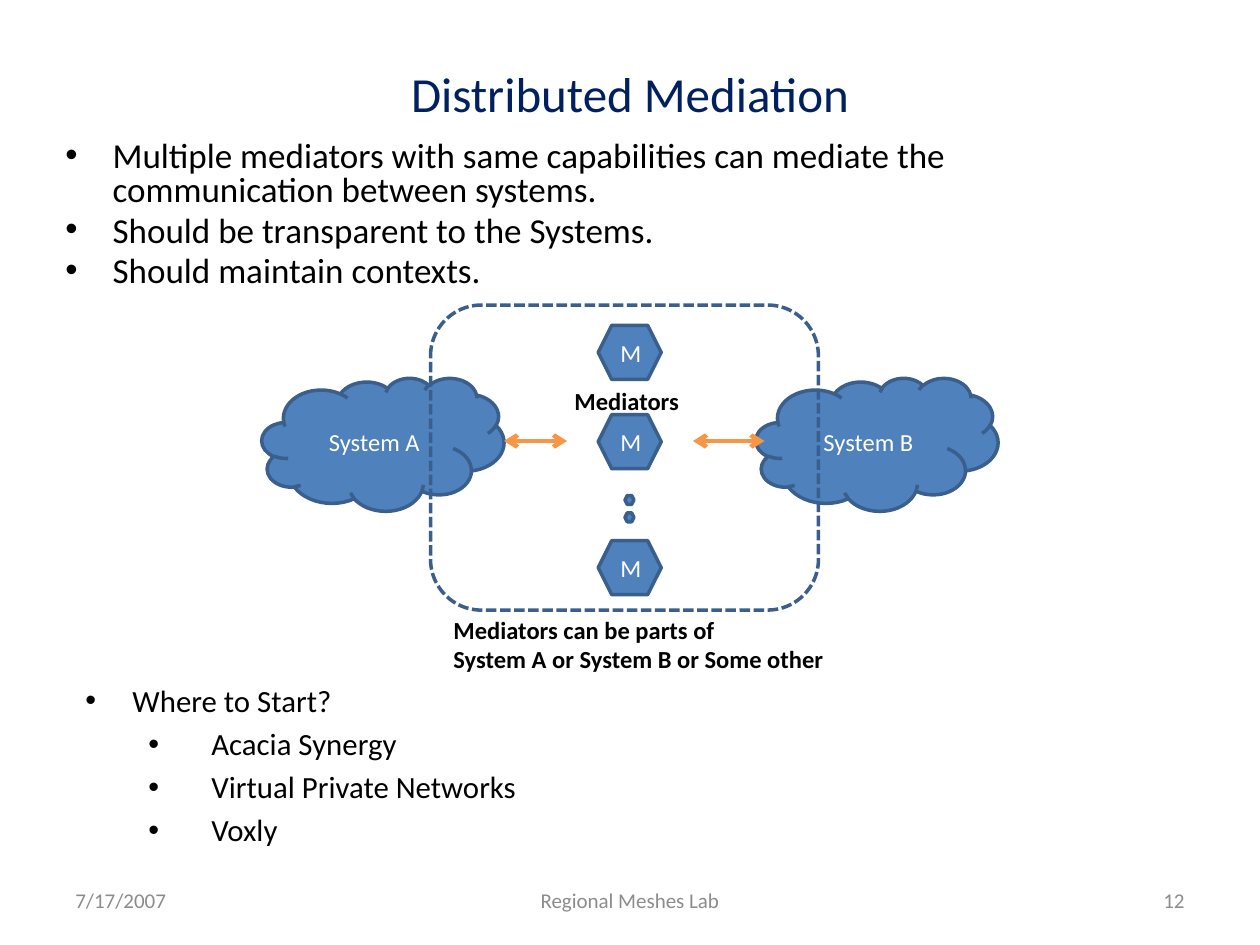
from lxml.etree import SubElement
from pptx import Presentation
from pptx.dml.color import RGBColor
from pptx.enum.dml import MSO_LINE
from pptx.enum.shapes import MSO_CONNECTOR, MSO_SHAPE as SHAPE
from pptx.enum.text import MSO_ANCHOR as ANCHOR, PP_ALIGN as ALIGN
from pptx.oxml.ns import qn
from pptx.util import Cm, Pt

COLORS = {"title": "002060", "text": "000000", "footer": "8C8C8C", "white": "FFFFFF",
          "fill": "4F81BD", "outline": "3A5F8C", "arrow": "F79646"}
FONT = "Calibri"


def rgb(name):
    """Return the named colour."""
    return RGBColor.from_string(COLORS[name])


def add_run(p, text, size, color, bold=False):
    """Add one formatted run to a paragraph."""
    r = p.add_run()
    r.text = text
    r.font.name, r.font.size, r.font.bold = FONT, Pt(size), bold
    r.font.color.rgb = rgb(color)


def add_text(shapes, box, lines, size, color, align=ALIGN.LEFT, anchor=ANCHOR.TOP,
             bold=False, wrap=True):
    """Add a text box with one paragraph per line."""
    tf = shapes.add_textbox(*map(Cm, box)).text_frame
    tf.word_wrap, tf.vertical_anchor = wrap, anchor
    for i, line in enumerate(lines):
        p = tf.add_paragraph() if i else tf.paragraphs[0]
        p.alignment = align
        add_run(p, line, size, color, bold)


def add_node(shapes, kind, box, label="", filled=True):
    """Add an outlined shape with an optional centred label."""
    sp = shapes.add_shape(kind, *map(Cm, box))
    sp.shadow.inherit = False
    sp.line.color.rgb, sp.line.width = rgb("outline"), Pt(2)
    if filled:
        sp.fill.solid()
        sp.fill.fore_color.rgb = rgb("fill")
    else:
        sp.fill.background()
    if label:
        tf = sp.text_frame
        tf.vertical_anchor = ANCHOR.MIDDLE
        p = tf.paragraphs[0]
        p.alignment = ALIGN.CENTER
        add_run(p, label, 14, "white")
    return sp


def add_arrow(shapes, x1, x2, y):
    """Add a horizontal line with an arrowhead at both ends."""
    c = shapes.add_connector(MSO_CONNECTOR.STRAIGHT, Cm(x1), Cm(y), Cm(x2), Cm(y))
    c.line.color.rgb, c.line.width = rgb("arrow"), Pt(2.5)
    ln = c.line._get_or_add_ln()
    for end in ("a:headEnd", "a:tailEnd"):
        SubElement(ln, qn(end), type="arrow")
    SubElement(c._element.spPr, qn("a:effectLst"))


def add_bullets(s, box, items, size):
    """Add a bulleted list of (level, text) items."""
    tf = s.shapes.add_textbox(*map(Cm, box)).text_frame
    tf.word_wrap = True
    for i, (level, text) in enumerate(items):
        p = tf.add_paragraph() if i else tf.paragraphs[0]
        p.level = level
        p.space_before = Pt(size * 0.2)
        p.line_spacing = 1.0 if level else 0.8
        margin, hang = (2.54, 1.27) if level else (0.95, 0.95)
        pPr = p._p.get_or_add_pPr()
        pPr.set("marL", str(Cm(margin)))
        pPr.set("indent", str(-Cm(hang)))
        SubElement(pPr, qn("a:buFont"), typeface="Arial")
        SubElement(pPr, qn("a:buChar"), char="•")
        add_run(p, text, size, "text")


def add_footer(s, x, y, w, h):
    """Place date, organisation and slide number along the bottom."""
    side, middle = 5.93, 8.05
    parts = [(x, side, "7/17/2007", ALIGN.LEFT),
             (x + (w - middle) / 2, middle, "Regional Meshes Lab", ALIGN.CENTER),
             (x + w - side, side, "12", ALIGN.RIGHT)]
    for left, width, text, align in parts:
        add_text(s.shapes, (left, y, width, h), [text], 12, "footer", align, ANCHOR.MIDDLE)


def add_diagram(s, x, y):
    """Draw two systems joined by a column of mediators."""
    shapes = s.shapes.add_group_shape().shapes
    for dx, name in ((0, "System A"), (9.96, "System B")):
        add_node(shapes, SHAPE.CLOUD, (x + dx, y + 1.47, 4.88, 2.68), name)
    for dy in (0.41, 2.21, 4.75):
        add_node(shapes, SHAPE.HEXAGON, (x + 6.78, y + dy, 1.27, 1.09), "M")
    for dy in (3.84, 4.19):
        add_node(shapes, SHAPE.HEXAGON, (x + 7.32, y + dy, 0.18, 0.18))
    for start, end in ((4.88, 6.15), (8.69, 10.13)):
        add_arrow(shapes, x + start, x + end, y + 2.74)
    add_text(shapes, (x + 6.05, y + 1.5, 2.64, 0.86), ["Mediators"], 14, "text",
             bold=True, wrap=False)
    add_text(shapes, (x + 3.61, y + 6.12, 8.74, 1.45),
             ["Mediators can be parts of", "System A or System B or Some other"],
             14, "text", bold=True)
    frame = add_node(shapes, SHAPE.ROUNDED_RECTANGLE, (x + 3.4, y, 7.82, 6.15), filled=False)
    frame.line.dash_style = MSO_LINE.SQUARE_DOT


def main():
    """Build and save the slide."""
    prs = Presentation()
    prs.slide_width, prs.slide_height = Cm(25.4), Cm(19.05)
    s = prs.slides.add_slide(prs.slide_layouts[6])
    add_text(s.shapes, (1.27, 0.76, 22.86, 2.21), ["Distributed Mediation"], 28, "title",
             ALIGN.CENTER, ANCHOR.MIDDLE)
    add_footer(s, 1.27, 17.65, 22.86, 1.01)
    add_diagram(s, 5.28, 6.15)
    add_bullets(s, (1.07, 2.74, 22.86, 3.38), [
        (0, "Multiple mediators with same capabilities can mediate the "
            "communication between systems."),
        (0, "Should be transparent to the Systems."),
        (0, "Should maintain contexts.")], 20)
    add_bullets(s, (1.47, 13.77, 22.86, 3.38), [
        (0, "Where to Start?"),
        (1, "Acacia Synergy"),
        (1, "Virtual Private Networks"),
        (1, "Voxly")], 17.6)
    prs.save("out.pptx")


if __name__ == "__main__":
    main()
